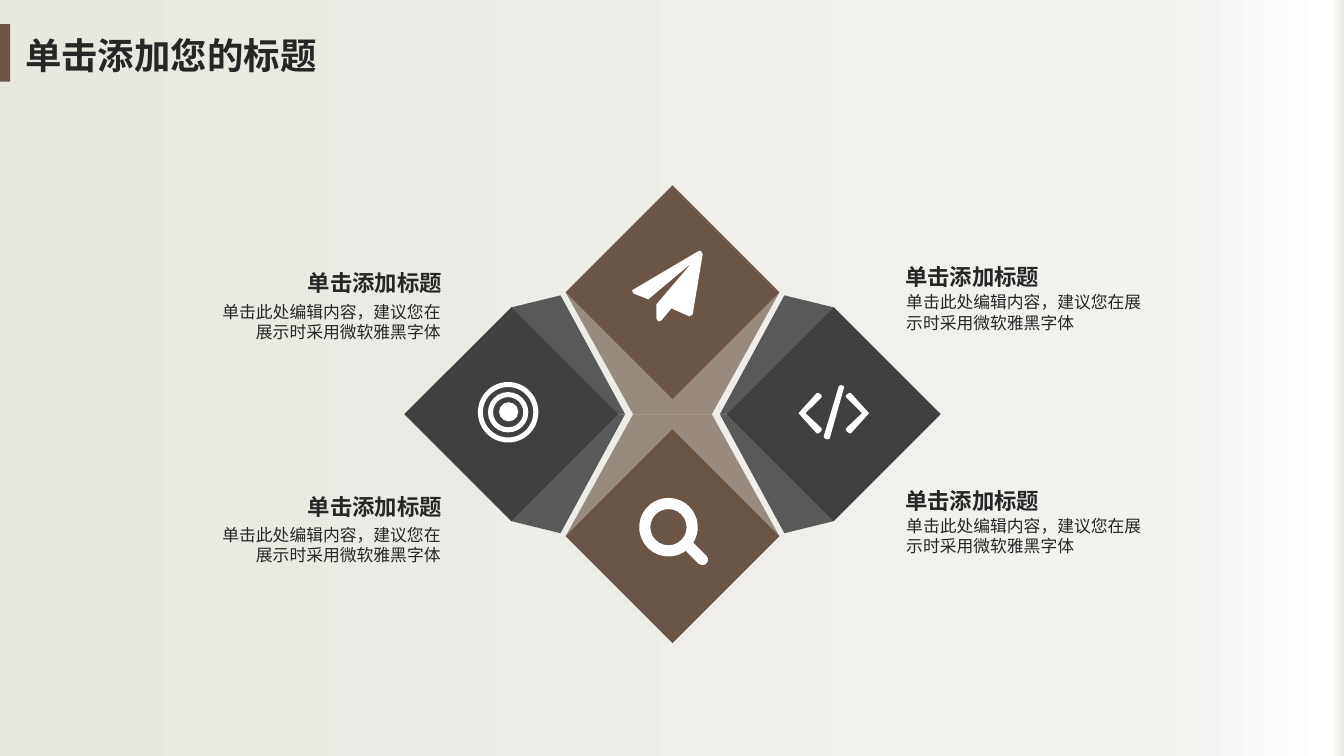
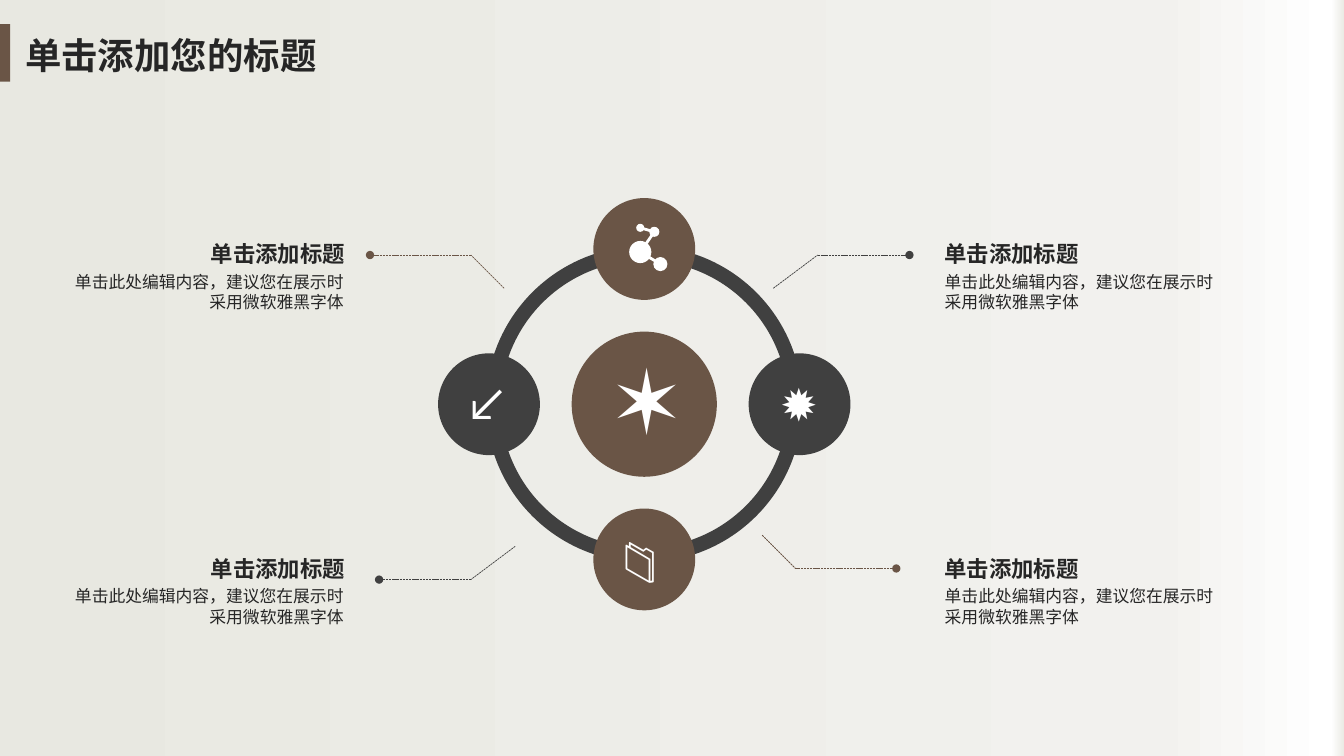
from lxml import etree
from pptx import Presentation
from pptx.dml.color import RGBColor
from pptx.enum.dml import MSO_LINE
from pptx.enum.lang import MSO_LANGUAGE_ID
from pptx.enum.shapes import MSO_CONNECTOR, MSO_SHAPE as Kind
from pptx.enum.text import MSO_ANCHOR as Anchor, PP_ALIGN as Align
from pptx.oxml.ns import qn
from pptx.util import Inches, Pt

COLOURS = {"brown": "6A5546", "dark": "404040", "ink": "262626", "white": "FFFFFF"}
BACKGROUND = [(0, "E8E8E1"), (86, "F2F1EE"), (99, "FFFFFF"), (100, "EBEBE5")]
CHINESE = "Noto Sans CJK SC"
TITLE = "单击添加您的标题"
HEADING = "单击添加标题"
BODY = "单击此处编辑内容，建议您在展示时采用微软雅黑字体"


def draw(page, kind, geometry, colour, opacity=100):
    if kind is None:
        points = [(Inches(x), Inches(y)) for x, y in geometry]
        builder = page.shapes.build_freeform(*points[0])
        builder.add_line_segments(points[1:], close=True)
        shape = builder.convert_to_shape()
    else:
        shape = page.shapes.add_shape(kind, *map(Inches, geometry))
    shape.shadow.inherit = False
    shape.line.fill.background()
    shape.fill.solid()
    shape.fill.fore_color.rgb = RGBColor.from_string(COLOURS[colour])
    if opacity < 100:
        fill = shape.element.xpath("./p:spPr/a:solidFill/a:srgbClr")[0]
        etree.SubElement(fill, qn("a:alpha"), val=str(opacity * 1000))
    return shape


def write(page, box, text, size, font=CHINESE, bold=False, colour="ink",
          align=Align.LEFT, anchor=Anchor.TOP, sides=(0.1, 0.1), wrap=True):
    frame = page.shapes.add_textbox(*map(Inches, box)).text_frame
    frame.word_wrap = wrap
    frame.vertical_anchor = anchor
    frame.margin_left, frame.margin_right = map(Inches, sides)
    frame.text = text
    para = frame.paragraphs[0]
    para.alignment = align
    if wrap:
        para.line_spacing = Pt(size * 1.2)
    span = para.runs[0]
    span.font.size = Pt(size)
    span.font.bold = bold
    span.font.name = font
    span.font.language_id = MSO_LANGUAGE_ID.SIMPLIFIED_CHINESE
    span.font.color.rgb = RGBColor.from_string(COLOURS[colour])
    etree.SubElement(span.font._element, qn("a:ea"), typeface=font)


deck = Presentation()
deck.slide_width, deck.slide_height = Inches(13.33), Inches(7.5)
master = deck.slide_master

backdrop = master.background.fill
backdrop.gradient()
backdrop.gradient_angle = 0
stops = master.element.xpath("./p:cSld/p:bg//a:gsLst")[0]
for stop in list(stops):
    stops.remove(stop)
for position, colour in BACKGROUND:
    stop = etree.SubElement(stops, qn("a:gs"), pos=str(position * 1000))
    etree.SubElement(stop, qn("a:srgbClr"), val=colour)

diamonds, ring = [deck.slides.add_slide(deck.slide_layouts[6]) for _ in range(2)]

bar = draw(diamonds, Kind.RECTANGLE, (0, 0.24, 0.1, 0.57), "brown")
bar.element.xpath("./p:nvSpPr/p:cNvPr")[0].set("id", "20")
master.shapes.element.append(bar.element)

centre_x, centre_y = 6.67, 4.11
reach_x, reach_y = 1.6, 1.21
side = 1.5
top_facet = [(1.06, -reach_y), (0.39, 0), (-0.39, 0), (-1.06, -reach_y)]
side_facet = [(reach_x, -1.06), (reach_x, 0), (0.47, 0), (1.11, -1.18)]
facets = [(top_facet, 1, 1, "brown", 65), (top_facet, 1, -1, "brown", 65)]
facets += [(side_facet, h, v, "dark", 85) for h in (1, -1) for v in (1, -1)]
for corners, h, v, colour, opacity in facets:
    outline = [(centre_x + h * x, centre_y + v * y) for x, y in corners]
    draw(diamonds, None, outline, colour, opacity)

for dx, dy, colour in [(0, -reach_y, "brown"), (0, reach_y, "brown"),
                       (reach_x, 0, "dark"), (-reach_x, 0, "dark")]:
    square = draw(diamonds, Kind.RECTANGLE,
                  (centre_x + dx - side / 2, centre_y + dy - side / 2, side, side), colour)
    square.rotation = 45

plane = [(6.95, 2.49), (6.97, 2.52), (6.87, 3.12), (6.84, 3.14), (6.66, 3.06),
         (6.56, 3.18), (6.53, 3.19), (6.51, 3.16), (6.51, 3.02), (6.86, 2.61),
         (6.43, 2.97), (6.28, 2.91), (6.27, 2.88), (6.93, 2.49)]
slash = [(8.23, 4.35), (8.21, 4.36), (8.18, 4.35), (8.17, 4.33),
         (8.32, 3.83), (8.34, 3.82), (8.37, 3.83), (8.37, 3.85)]
bracket = [(0.35, 0), (0.17, 0.2), (0.15, 0.2), (0.12, 0.17), (0.12, 0.15),
           (0.28, 0), (0.12, -0.16), (0.12, -0.18), (0.15, -0.2), (0.17, -0.2)]
brackets = [[(8.27 + h * x, 4.1 + y) for x, y in bracket] for h in (1, -1)]
for outline in [plane, slash, *brackets]:
    draw(diamonds, None, outline, "white")

for x, y, radius, thickness in [(6.63, 5.23, 0.29, 0.11), (5.04, 4.09, 0.3, 0.05),
                                (5.04, 4.09, 0.2, 0.05)]:
    loop = draw(diamonds, Kind.DONUT, (x - radius, y - radius, 2 * radius, 2 * radius), "white")
    loop.adjustments[0] = thickness / (2 * radius)
draw(diamonds, Kind.OVAL, (4.95, 3.99, 0.19, 0.19), "white")
handle = draw(diamonds, Kind.ROUNDED_RECTANGLE, (6.75, 5.43, 0.3, 0.11), "white")
handle.adjustments[0] = 0.5
handle.rotation = 45

hub_x, hub_y, orbit = 6.39, 4.01, 1.54
band = draw(ring, Kind.DONUT, (hub_x - 1.57, hub_y - 1.57, 3.14, 3.14), "dark")
band.adjustments[0] = 0.046
for dx, dy, diameter, colour in [(0, 0, 1.44, "brown"), (0, -orbit, 1.01, "brown"),
                                 (orbit, 0, 1.01, "dark"), (0, orbit, 1.01, "brown"),
                                 (-orbit, 0, 1.01, "dark")]:
    draw(ring, Kind.OVAL, (hub_x + dx - diameter / 2, hub_y + dy - diameter / 2,
                           diameter, diameter), colour)

for symbol, box, size in [("↙", (4.56, 3.67, 0.68, 0.64), 32),
                          ("✹", (7.64, 3.69, 0.65, 0.64), 32),
                          ("📁", (6.09, 5.22, 0.68, 0.64), 32),
                          ("✶", (5.95, 3.37, 0.97, 1.18), 64)]:
    write(ring, box, symbol, size, font="Lato", colour="white", wrap=False)

leaders = [("dark", (7.67, 2.86), (8.11, 2.53), (9.02, 2.53)),
           ("brown", (7.56, 5.31), (7.89, 5.64), (8.89, 5.64)),
           ("brown", (5, 2.86), (4.67, 2.53), (3.67, 2.53)),
           ("dark", (5.11, 5.42), (4.67, 5.75), (3.76, 5.75))]
molecule = [(6.35, 2.5, 0.11), (6.49, 2.3, 0.05), (6.35, 2.26, 0.04), (6.55, 2.62, 0.07)]
bonds = [(0, 1), (1, 2), (0, 3)]
lines = []
for colour, start, bend, end in leaders:
    lines += [(start, bend, colour, 0.5, False), (bend, end, colour, 0.5, True)]
for first, second in bonds:
    lines.append((molecule[first][:2], molecule[second][:2], "white", 2, False))
for start, end, colour, width, dotted_end in lines:
    line = ring.shapes.add_connector(MSO_CONNECTOR.STRAIGHT, *map(Inches, start + end))
    line.line.color.rgb = RGBColor.from_string(COLOURS[colour])
    line.line.width = Pt(width)
    if colour != "white":
        line.line.dash_style = MSO_LINE.SQUARE_DOT
    if dotted_end:
        stroke = line.element.xpath("./p:spPr/a:ln")[0]
        etree.SubElement(stroke, qn("a:tailEnd"), type="oval")
    etree.SubElement(line.element.spPr, qn("a:effectLst"))
for x, y, radius in molecule:
    draw(ring, Kind.OVAL, (x - radius, y - radius, 2 * radius, 2 * radius), "white")

for row in range(2):
    drop = row * 2.22
    for x, y, width, align in [(8.88, 2.56, 2.17, Align.LEFT), (2.49, 2.62, 1.99, Align.RIGHT)]:
        write(diamonds, (x, y + drop, width, 0.37), HEADING, 16, bold=True, align=align)
    for x, y, width, align in [(8.89, 2.85, 2.54, Align.LEFT), (2.09, 2.94, 2.38, Align.RIGHT)]:
        write(diamonds, (x, y + drop, width, 0.5), BODY, 12, align=align)

    drop = row * 3.12
    for x, width, align in [(9.27, 2.31, Align.LEFT), (1, 2.52, Align.RIGHT)]:
        write(ring, (x, 2.37 + drop, width, 0.3), HEADING, 16, bold=True,
              align=align, anchor=Anchor.MIDDLE)
    for x, width, align, sides in [(9.37, 2.83, Align.LEFT, (0, 0.1)),
                                   (0.7, 2.71, Align.RIGHT, (0, 0))]:
        write(ring, (x, 2.6 + drop, width, 0.59), BODY, 12, font="Arial",
              align=align, anchor=Anchor.MIDDLE, sides=sides)

for page in (diamonds, ring):
    write(page, (0.15, 0.28, 3.91, 0.54), TITLE, 26, bold=True)

deck.save("out.pptx")
